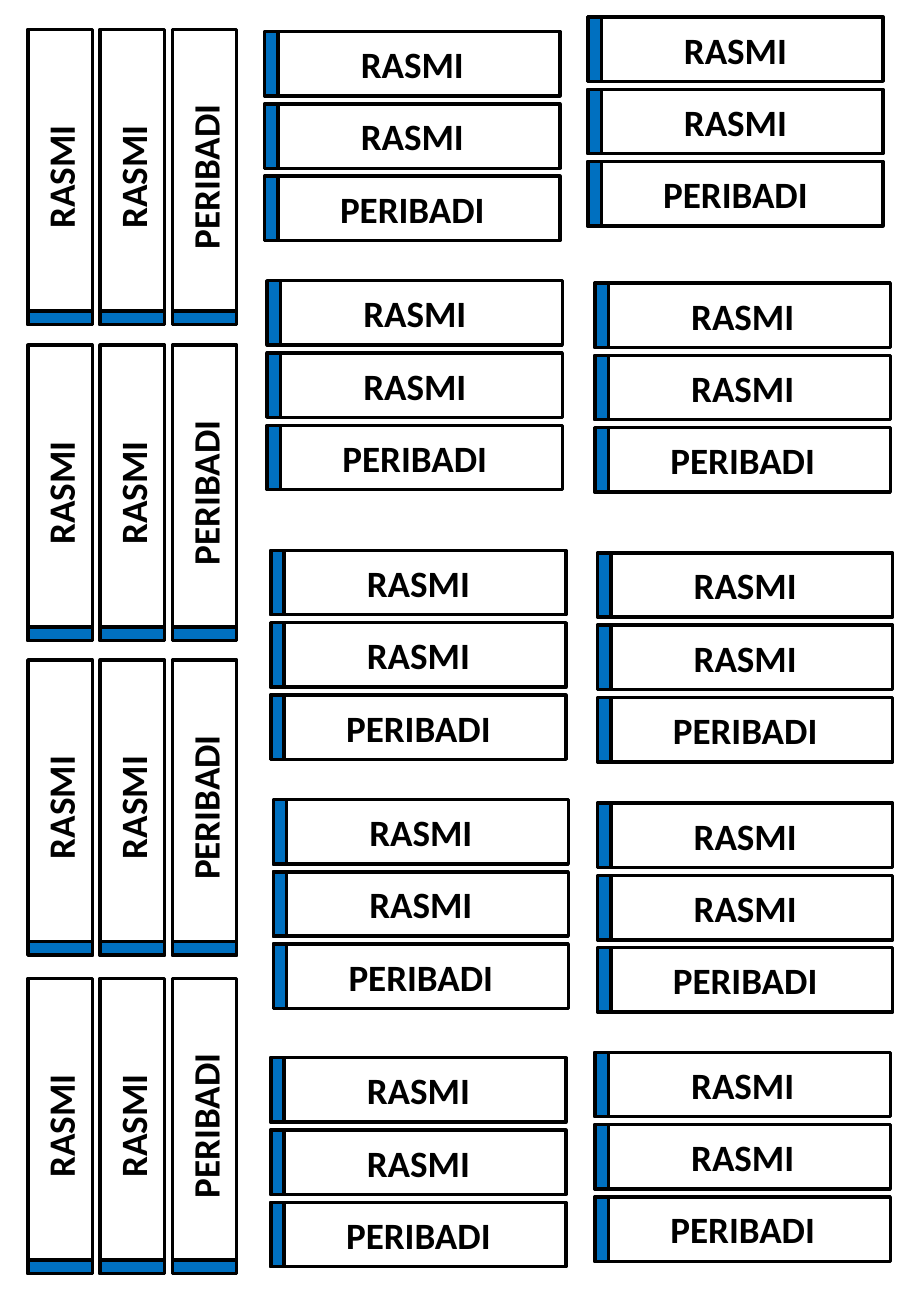
import pptx
import pptx.util
import pptx.dml.color
import pptx.enum.shapes
import pptx.enum.text

PX = 4572
LABELS = ["RASMI", "RASMI", "PERIBADI"]
LENGTH, THICKNESS, BAND, PITCH = 486, 106, 22, 119
UPRIGHT_LEFT = 46
UPRIGHT_TOPS = [48, 568, 1086, 1610]
FLAT_CORNERS = [
    (436, 52), (968, 28),
    (440, 462), (980, 466),
    (446, 906), (984, 910),
    (450, 1316), (984, 1322),
    (446, 1741), (980, 1732),
]


def colour(value):
    return pptx.dml.color.RGBColor.from_string(value)


def add_box(group, left, top, width, height, upright):
    if upright:
        left, top = left + (height - width) / 2, top + (width - height) / 2
    box = group.shapes.add_shape(
        pptx.enum.shapes.MSO_SHAPE.RECTANGLE,
        *(int(length * PX) for length in (left, top, width, height)))
    box.rotation = 270 if upright else 0
    box.shadow.inherit = False
    box.line.color.rgb = colour("000000")
    box.line.width = pptx.util.Pt(2)
    return box


def add_label(group, left, top, text, upright):
    box = add_box(group, left, top, LENGTH, THICKNESS, upright)
    box.fill.background()
    box.text_frame.vertical_anchor = pptx.enum.text.MSO_ANCHOR.MIDDLE
    para = box.text_frame.paragraphs[0]
    para.text = text
    para.alignment = pptx.enum.text.PP_ALIGN.CENTER
    para.font.name = "Calibri"
    para.font.size = pptx.util.Pt(22)
    para.font.bold = True
    para.font.color.rgb = colour("000000")

    band_top = top + LENGTH - BAND if upright else top
    band = add_box(group, left, band_top, BAND, THICKNESS, upright)
    band.fill.solid()
    band.fill.fore_color.rgb = colour("0070C0")


def add_label_set(page, left, top, upright):
    group = page.shapes.add_group_shape()
    for index, text in enumerate(LABELS):
        step = index * PITCH
        if upright:
            add_label(group, left + step, top, text, upright)
        else:
            add_label(group, left, top + step, text, upright)


def main():
    deck = pptx.Presentation()
    deck.slide_width = 1500 * PX
    deck.slide_height = 2166 * PX
    page = deck.slides.add_slide(deck.slide_layouts[6])
    for top in UPRIGHT_TOPS:
        add_label_set(page, UPRIGHT_LEFT, top, True)
    for left, top in FLAT_CORNERS:
        add_label_set(page, left, top, False)
    deck.save("out.pptx")


if __name__ == "__main__":
    main()
